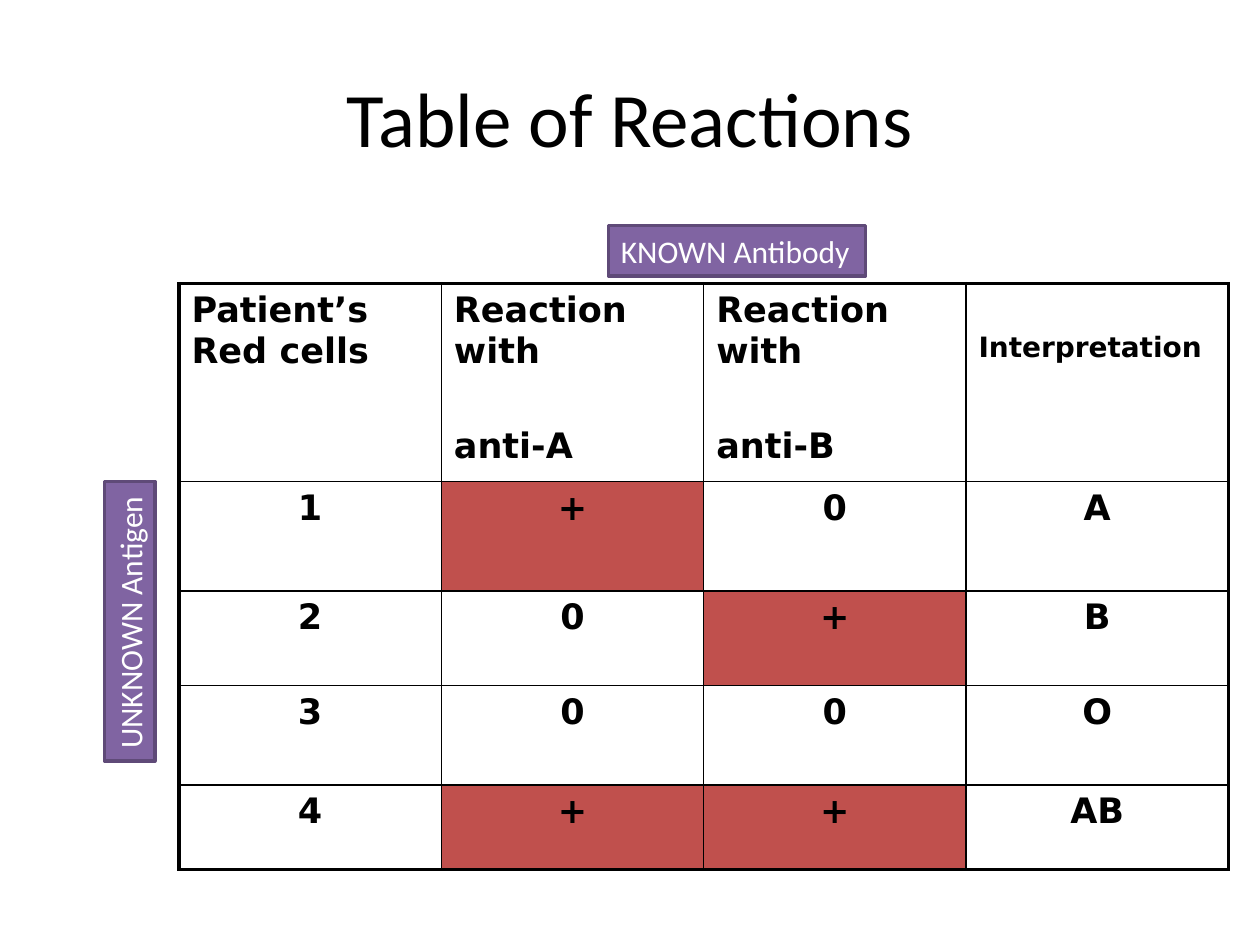
from dataclasses import dataclass

from lxml.etree import SubElement
from pptx import Presentation
from pptx.dml.color import RGBColor
from pptx.enum.shapes import MSO_SHAPE
from pptx.enum.text import MSO_ANCHOR, MSO_AUTO_SIZE, PP_ALIGN
from pptx.oxml.ns import qn
from pptx.util import Inches, Pt

BLACK = RGBColor(0x00, 0x00, 0x00)
WHITE = RGBColor(0xFF, 0xFF, 0xFF)
RED = RGBColor(0xC0, 0x50, 0x4D)
PURPLE = RGBColor(0x80, 0x64, 0xA2)
DARK_PURPLE = RGBColor(0x5F, 0x4A, 0x78)

GRID = 0.1
GRID_COLS, GRID_ROWS = 100, 75
OUTER, INNER = 2.25, 1
ROW_HEIGHTS = (15.7, 8.7, 7.5, 7.9, 6.7)
HEADERS = (
    ("Patient’s Red cells",),
    ("Reaction with", "anti-A"),
    ("Reaction with", "anti-B"),
    ("Interpretation",),
)
REACTIONS = (
    ("1", "+", "0", "A"),
    ("2", "0", "+", "B"),
    ("3", "0", "0", "O"),
    ("4", "+", "+", "AB"),
)


@dataclass(frozen=True)
class Box:
    """A place on the slide, in grid columns and rows."""
    col: float
    row: float
    cols: float
    rows: float

    def lengths(self) -> list:
        """Return left, top, width and height."""
        return [units(n) for n in (self.col, self.row, self.cols, self.rows)]


@dataclass(frozen=True)
class Tag:
    """A purple label beside the table."""
    text: str
    box: Box
    rotation: float = 0


TITLE = Box(5, 3, 90, 12.5)
TABLE = Box(14.2, 22.5, 83.3, sum(ROW_HEIGHTS))
TAGS = (
    Tag("UNKNOWN Antigen", Box(-0.8, 47.3, 22.2, 4), 270),
    Tag("KNOWN Antibody", Box(48.3, 17.9, 20.4, 4)),
)


def units(n: float) -> int:
    """Convert grid units to a length."""
    return Inches(n * GRID)


def write(tf, *lines: str, size: float = 20, font: str = "DejaVu Sans",
          color: RGBColor = BLACK, bold: bool = False,
          align: PP_ALIGN = PP_ALIGN.LEFT, gap: float = 0) -> None:
    """Write each line as a paragraph, with a gap between paragraphs."""
    for i, line in enumerate(lines):
        p = tf.add_paragraph() if i else tf.paragraphs[0]
        p.alignment = align
        p.space_before = Pt(gap if i else 0)
        r = p.add_run()
        r.text = line
        r.font.name, r.font.size, r.font.bold = font, Pt(size), bold
        r.font.color.rgb = color


def add_title(s, text: str) -> None:
    """Add the centred slide title."""
    tf = s.shapes.add_textbox(*TITLE.lengths()).text_frame
    tf.word_wrap = True
    tf.vertical_anchor = MSO_ANCHOR.MIDDLE
    write(tf, text, size=44, font="Calibri", align=PP_ALIGN.CENTER)


def add_tag(s, tag: Tag) -> None:
    """Add a filled label."""
    sp = s.shapes.add_shape(MSO_SHAPE.RECTANGLE, *tag.box.lengths())
    sp.rotation = tag.rotation
    sp.shadow.inherit = False
    sp.fill.solid()
    sp.fill.fore_color.rgb = PURPLE
    sp.line.color.rgb = DARK_PURPLE
    sp.line.width = Pt(2)
    tf = sp.text_frame
    tf.word_wrap = False
    tf.auto_size = MSO_AUTO_SIZE.SHAPE_TO_FIT_TEXT
    tf.vertical_anchor = MSO_ANCHOR.TOP
    write(tf, tag.text, size=18, font="Calibri", color=WHITE)


def set_borders(cell, row: int, col: int) -> None:
    """Draw thick lines on the table's rim and thin ones inside."""
    tc_pr = cell._tc.get_or_add_tcPr()
    rims = {"lnL": col == 0, "lnR": col == len(HEADERS) - 1,
            "lnT": row == 0, "lnB": row == len(REACTIONS)}
    for i, (side, rim) in enumerate(rims.items()):
        ln = SubElement(tc_pr, qn(f"a:{side}"), w=str(Pt(OUTER if rim else INNER)))
        SubElement(SubElement(ln, qn("a:solidFill")), qn("a:srgbClr"), val=str(BLACK))
        tc_pr.insert(i, ln)


def add_reactions(s) -> None:
    """Add the table of reactions."""
    table = s.shapes.add_table(len(ROW_HEIGHTS), len(HEADERS), *TABLE.lengths()).table
    table.first_row = table.horz_banding = False
    for row, height in zip(table.rows, ROW_HEIGHTS):
        row.height = units(height)
    for col in table.columns:
        col.width = units(TABLE.cols / len(HEADERS))
    for i, values in enumerate((HEADERS, *REACTIONS)):
        for j, value in enumerate(values):
            cell = table.cell(i, j)
            if value == "+":
                cell.fill.solid()
                cell.fill.fore_color.rgb = RED
            else:
                cell.fill.background()
            set_borders(cell, i, j)
            if i:
                write(cell.text_frame, value, bold=True, align=PP_ALIGN.CENTER)
            else:
                last = j == len(HEADERS) - 1
                cell.margin_top = units(3.8 if last else 0.5)
                write(cell.text_frame, *value, size=16 if last else 20, bold=True, gap=31)


def main() -> None:
    """Build and save the slide."""
    prs = Presentation()
    prs.slide_width, prs.slide_height = units(GRID_COLS), units(GRID_ROWS)
    s = prs.slides.add_slide(prs.slide_layouts[6])
    add_title(s, "Table of Reactions")
    add_reactions(s)
    for tag in TAGS:
        add_tag(s, tag)
    prs.save("out.pptx")


if __name__ == "__main__":
    main()
